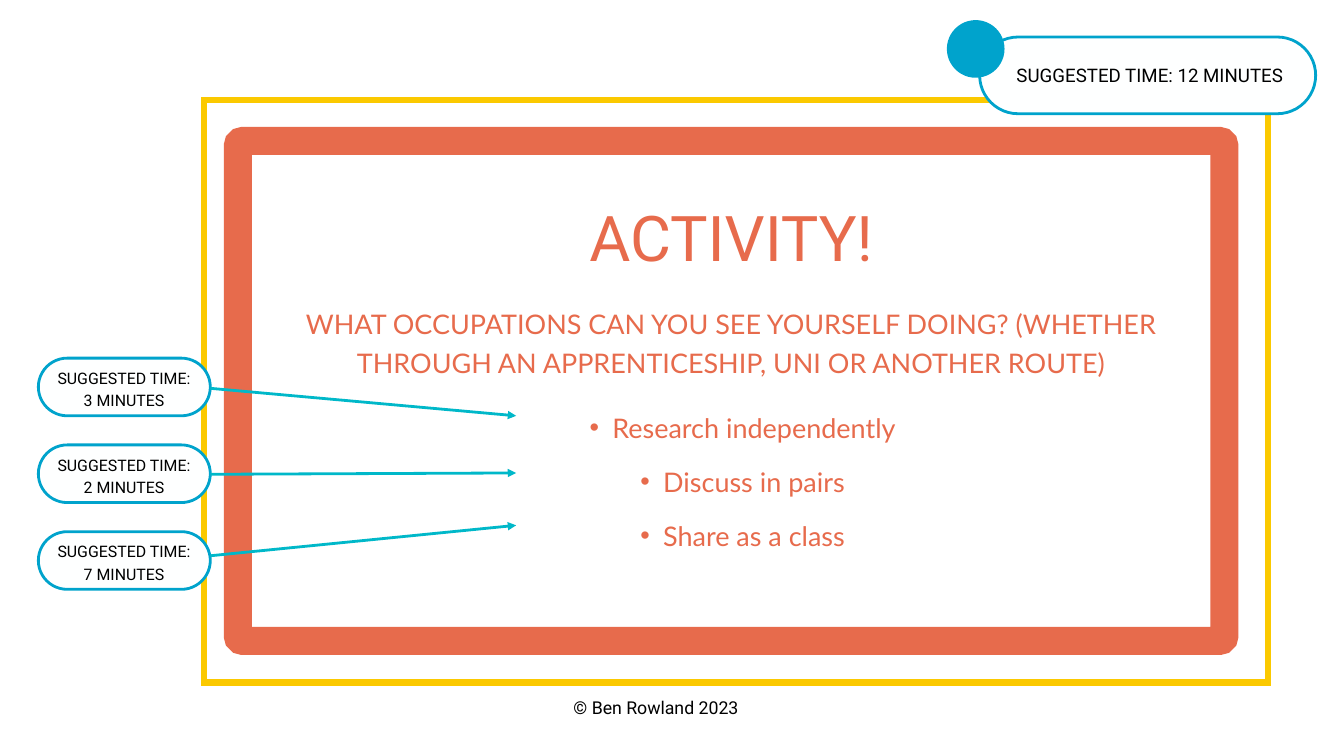
import dataclasses
import typing

import lxml.etree
import pptx
import pptx.dml.color
import pptx.enum.shapes
import pptx.enum.text
import pptx.oxml.ns
import pptx.util

Cm = pptx.util.Cm
Pt = pptx.util.Pt
ShapeKind = pptx.enum.shapes.MSO_SHAPE

COLORS = {
    "coral": "E76B4C",
    "yellow": "FBC900",
    "blue": "00A3CC",
    "turquoise": "00B8C9",
    "white": "FEFFFF",
    "black": "000000",
}
FRAME_FORMAT = {
    "margin_left": 0,
    "margin_top": 0,
    "margin_right": 0,
    "margin_bottom": 0,
    "word_wrap": True,
    "auto_size": pptx.enum.text.MSO_AUTO_SIZE.NONE,
    "vertical_anchor": pptx.enum.text.MSO_ANCHOR.TOP,
}


@dataclasses.dataclass
class Box:
    left: float
    top: float
    width: float
    height: float

    def lengths(self) -> list:
        return [Cm(value) for value in dataclasses.astuple(self)]


@dataclasses.dataclass
class TextStyle:
    font: str
    size: float
    spacing: float
    color: str
    bulleted: bool = False


@dataclasses.dataclass
class Outline:
    kind: typing.Any
    box: Box
    fill: typing.Optional[str] = None
    line: typing.Optional[str] = None
    line_width: float = 0
    corner: typing.Optional[float] = None


@dataclasses.dataclass
class Step:
    activity: str
    minutes: int
    arrow_start: float
    arrow_end: float


TITLE = TextStyle("Roboto", 67.5, 74.2, "coral")
QUESTION = TextStyle("Lato", 28.9, 42, "coral")
ACTIVITIES = TextStyle("Lato", 28.9, 57.9, "coral", bulleted=True)
COPYRIGHT = TextStyle("Roboto", 19, 26.6, "black")
TOTAL_TIME = TextStyle("Roboto", 20, 28, "black")
STEP_TIME = TextStyle("Roboto", 17, 23.8, "black")

STEPS = [
    Step("Research independently", 3, 14.68, 15.72),
    Step("Discuss in pairs", 2, 17.93, 17.88),
    Step("Share as a class", 7, 21.01, 19.86),
]
STEP_TOP = 13.54
STEP_PITCH = 3.28
ARROW_LEFT = 7.95
ARROW_RIGHT = 19.51


def color(name: str) -> pptx.dml.color.RGBColor:
    return pptx.dml.color.RGBColor.from_string(COLORS[name])


def set_attributes(target: typing.Any, values: dict) -> None:
    for name, value in values.items():
        setattr(target, name, value)


def add_child(parent: typing.Any, tag: str, **attributes: str) -> None:
    lxml.etree.SubElement(parent, pptx.oxml.ns.qn(tag), attributes)


def add_bullet(paragraph: typing.Any) -> None:
    paragraph.level = 1
    properties = paragraph._p.get_or_add_pPr()
    properties.set("marL", str(Cm(1.73)))
    properties.set("indent", str(Cm(-0.86)))
    add_child(properties, "a:buFont", typeface="Arial")
    add_child(properties, "a:buChar", char="•")


def write_text(shape: typing.Any, box: Box, lines: list, style: TextStyle) -> None:
    edges = ("left", "top", "width", "height")
    set_attributes(shape, dict(zip(edges, box.lengths())))
    frame = shape.text_frame
    set_attributes(frame, FRAME_FORMAT)
    for index, line in enumerate(lines):
        paragraph = frame.add_paragraph() if index else frame.paragraphs[0]
        if style.bulleted:
            add_bullet(paragraph)
        set_attributes(paragraph, {
            "alignment": pptx.enum.text.PP_ALIGN.CENTER,
            "line_spacing": Pt(style.spacing),
            "space_before": Pt(0),
            "space_after": Pt(0),
        })
        run = paragraph.add_run()
        run.text = line
        set_attributes(run.font, {"name": style.font, "size": Pt(style.size), "bold": False})
        run.font.color.rgb = color(style.color)


def add_text(slide: typing.Any, box: Box, lines: list, style: TextStyle) -> None:
    write_text(slide.shapes.add_textbox(*box.lengths()), box, lines, style)


def draw_outline(slide: typing.Any, outline: Outline) -> None:
    shape = slide.shapes.add_shape(outline.kind, *outline.box.lengths())
    shape.shadow.inherit = False
    if outline.corner is not None:
        shape.adjustments[0] = outline.corner
    if outline.fill:
        shape.fill.solid()
        shape.fill.fore_color.rgb = color(outline.fill)
    else:
        shape.fill.background()
    if outline.line:
        shape.line.color.rgb = color(outline.line)
        shape.line.width = Pt(outline.line_width)
        add_child(shape.line._get_or_add_ln(), "a:miter", lim="800000")
    else:
        shape.line.fill.background()


def draw_pill(slide: typing.Any, box: Box) -> None:
    draw_outline(slide, Outline(ShapeKind.ROUNDED_RECTANGLE, box, "white", "blue", 3, 0.5))


def draw_arrow(slide: typing.Any, start: float, end: float) -> None:
    arrow = slide.shapes.add_connector(
        pptx.enum.shapes.MSO_CONNECTOR.STRAIGHT,
        Cm(ARROW_LEFT), Cm(start), Cm(ARROW_RIGHT), Cm(end),
    )
    arrow.line.color.rgb = color("turquoise")
    arrow.line.width = Pt(3)
    add_child(arrow.line._get_or_add_ln(), "a:tailEnd", type="triangle")
    add_child(arrow._element.spPr, "a:effectLst")


def main() -> None:
    presentation = pptx.Presentation()
    presentation.slide_width = Cm(50.8)
    presentation.slide_height = Cm(28.58)
    slide = presentation.slides.add_slide(presentation.slide_layouts[1])
    title, body = slide.placeholders

    draw_outline(slide, Outline(
        ShapeKind.ROUNDED_RECTANGLE, Box(8.99, 5.33, 37.29, 18.9),
        line="coral", line_width=30, corner=0.01,
    ))
    add_text(slide, Box(21.62, 26.21, 6.35, 0.89), ["© Ben Rowland 2023"], COPYRIGHT)
    write_text(title, Box(17.3, 7.75, 20.68, 2.74), ["ACTIVITY!"], TITLE)
    add_text(slide, Box(11.05, 11.35, 33.17, 2.82), [
        "WHAT OCCUPATIONS CAN YOU SEE YOURSELF DOING? "
        "(WHETHER THROUGH AN APPRENTICESHIP, UNI OR ANOTHER ROUTE)"
    ], QUESTION)
    write_text(body, Box(19.05, 14.73, 17.17, 5.74), [step.activity for step in STEPS], ACTIVITIES)
    draw_outline(slide, Outline(
        ShapeKind.RECTANGLE, Box(7.7, 3.78, 40.23, 22.02), line="yellow", line_width=6.75,
    ))

    draw_pill(slide, Box(37.03, 1.4, 12.7, 2.9))
    draw_outline(slide, Outline(ShapeKind.OVAL, Box(35.79, 0.76, 2.18, 2.18), fill="blue"))
    add_text(slide, Box(37.44, 2.29, 12.04, 0.89), ["SUGGESTED TIME: 12 MINUTES"], TOTAL_TIME)

    for index, step in enumerate(STEPS):
        top = STEP_TOP + index * STEP_PITCH
        draw_pill(slide, Box(1.45, top, 6.5, 2.18))
        add_text(slide, Box(1.96, top + 0.27, 5.46, 1.6),
                 ["SUGGESTED TIME:", f"{step.minutes} MINUTES"], STEP_TIME)
    for step in STEPS:
        draw_arrow(slide, step.arrow_start, step.arrow_end)

    presentation.save("out.pptx")


if __name__ == "__main__":
    main()
